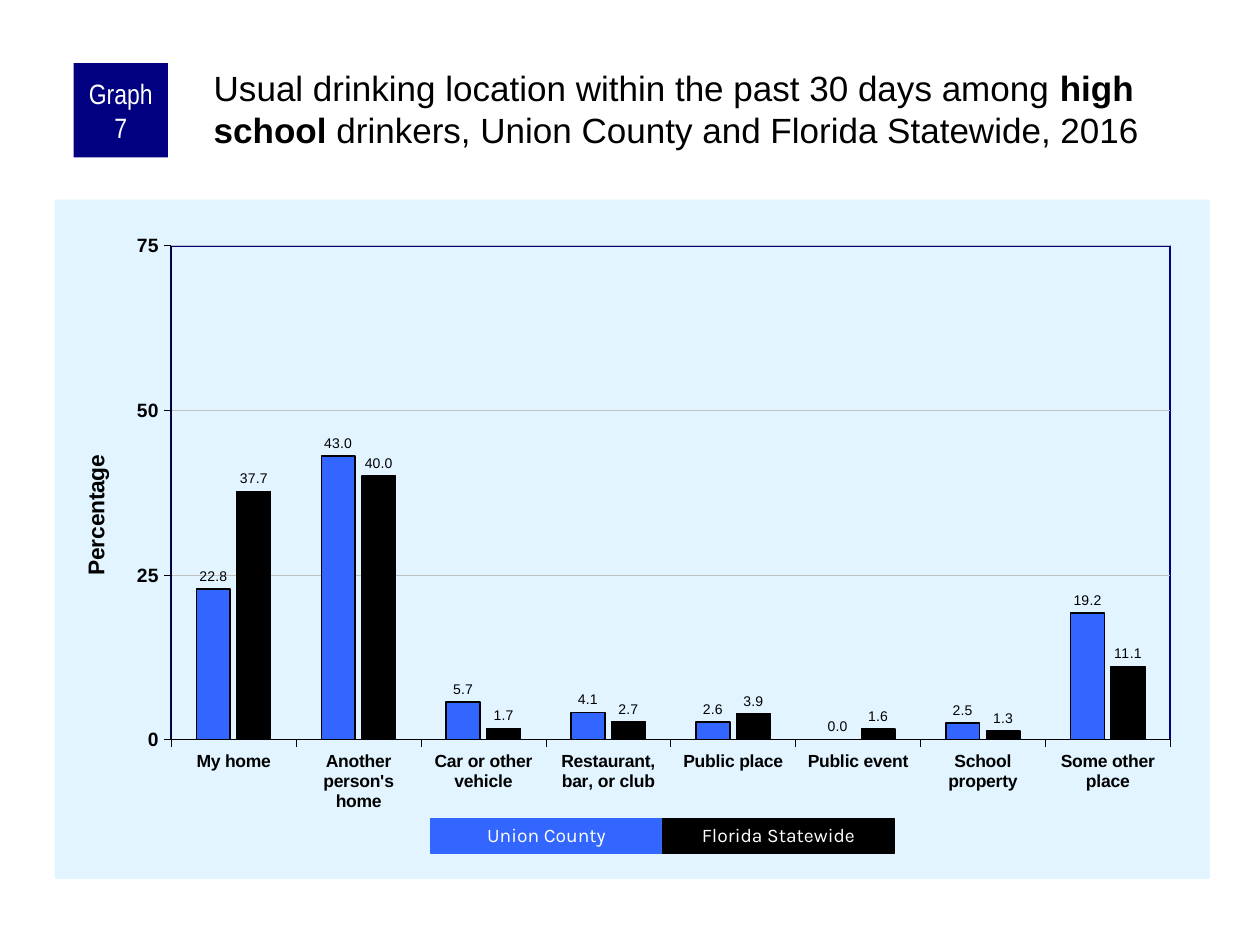
from pptx import Presentation
from pptx.chart.data import CategoryChartData
from pptx.dml.color import RGBColor
from pptx.enum.chart import XL_CHART_TYPE as ChartType
from pptx.enum.chart import XL_LABEL_POSITION as LabelPosition
from pptx.enum.chart import XL_TICK_MARK as TickMark
from pptx.enum.shapes import MSO_SHAPE as Shape
from pptx.enum.text import MSO_ANCHOR as Anchor
from pptx.enum.text import PP_ALIGN as Align
from pptx.oxml import parse_xml
from pptx.oxml.ns import nsdecls, qn
from pptx.util import Inches, Pt

NAVY = RGBColor(0x00, 0x00, 0x80)
BLUE = RGBColor(0x33, 0x66, 0xFF)
PALE = RGBColor(0xE1, 0xF4, 0xFF)
GRAY = RGBColor(0xC0, 0xC0, 0xC0)
BLACK = RGBColor(0x00, 0x00, 0x00)
WHITE = RGBColor(0xFF, 0xFF, 0xFF)

WIDTH, HEIGHT = Inches(10), Inches(7.5)
COLUMNS, ROWS = 120, 90

LOCATIONS = {
    "My home": (22.8, 37.7),
    "Another person's home": (43.0, 40.0),
    "Car or other vehicle": (5.7, 1.7),
    "Restaurant, bar, or club": (4.1, 2.7),
    "Public place": (2.6, 3.9),
    "Public event": (0.0, 1.6),
    "School property": (2.5, 1.3),
    "Some other place": (19.2, 11.1),
}
SERIES = (
    ("Union County", BLUE, 1, "0.0"),
    ("Florida Statewide", BLACK, 0.75, "#,##0.0"),
)


def grid(column, row, columns, rows):
    across, down = WIDTH / COLUMNS, HEIGHT / ROWS
    return [int(n) for n in (column * across, row * down, columns * across, rows * down)]


def apply(target, values):
    for name, value in values.items():
        setattr(target, name, value)


def set_font(font, size, color, name="Arial", bold=False):
    apply(font, {"size": Pt(size), "name": name, "bold": bold})
    font.color.rgb = color


def set_line(line, color, width):
    line.color.rgb = color
    line.width = Pt(width)


def add_para(frame, spans, size, color, name="Arial", **values):
    para = frame.paragraphs[0]
    apply(para, values)
    for text, bold in spans:
        span = para.add_run()
        span.text = text
        set_font(span.font, size, color, name, bold)


def add_block(page, place, fill, line=None):
    box = page.shapes.add_shape(Shape.RECTANGLE, *grid(*place))
    box.shadow.inherit = False
    box.fill.solid()
    box.fill.fore_color.rgb = fill
    if line is None:
        box.line.fill.background()
    else:
        set_line(box.line, line, 0.75)
    box.text_frame.word_wrap = True
    box.text_frame.vertical_anchor = Anchor.MIDDLE
    return box.text_frame


def add_badge(page):
    frame = add_block(page, (7, 6, 9, 9), NAVY)
    apply(frame, {"margin_left": Inches(0.05), "margin_right": Inches(0.05),
                  "margin_top": 0, "margin_bottom": 0})
    add_para(frame, [("Graph 7", False)], 16, WHITE, "Arial Narrow", alignment=Align.CENTER)


def add_heading(page):
    frame = page.shapes.add_textbox(*grid(20, 6, 95, 10)).text_frame
    apply(frame, {"word_wrap": True, "margin_left": Inches(0.03), "margin_top": Inches(0.03),
                  "margin_right": 0, "margin_bottom": 0})
    spans = [
        ("Usual drinking location within the past 30 days among ", False),
        ("high school", True),
        (" drinkers, Union County and Florida Statewide, 2016", False),
    ]
    add_para(frame, spans, 20, BLACK)


def add_key(page):
    width = 22.1
    for index, (label, color, *_) in enumerate(SERIES):
        frame = add_block(page, (41 + index * width, 78, width, 3.25), color, color)
        add_para(frame, [(label, False)], 11, WHITE, "Karla",
                 alignment=Align.CENTER, line_spacing=0.9)


def set_layout(element, position, values):
    for old in element.findall(qn("c:layout")):
        element.remove(old)
    parts = "".join(f'<c:{name} val="{value}"/>' for name, value in values.items())
    element.insert(position, parse_xml(
        f'<c:layout {nsdecls("c")}><c:manualLayout>{parts}</c:manualLayout></c:layout>'))


def area_style(fill, line):
    return parse_xml(f'<c:spPr {nsdecls("c", "a")}>{fill}{line}</c:spPr>')


def style_axis(axis, size):
    set_font(axis.tick_labels.font, size, BLACK, bold=True)
    set_line(axis.format.line, BLACK, 0.25)
    apply(axis, {"major_tick_mark": TickMark.OUTSIDE, "minor_tick_mark": TickMark.NONE})


def style_value_axis(axis):
    style_axis(axis, 11)
    apply(axis, {"minimum_scale": 0, "maximum_scale": 75, "major_unit": 25,
                 "has_major_gridlines": True})
    set_line(axis.major_gridlines.format.line, GRAY, 0.25)
    frame = axis.axis_title.text_frame
    add_para(frame, [("Percentage", True)], 13, BLACK)
    body = frame._txBody.bodyPr
    body.set("rot", "-5400000")
    body.set("vert", "horz")
    set_layout(axis.axis_title._element, 1,
               {"xMode": "edge", "yMode": "edge", "x": 0.02, "y": 0.37})


def style_series(series, color, width, number_format):
    series.format.fill.solid()
    series.format.fill.fore_color.rgb = color
    series.invert_if_negative = False
    set_line(series.format.line, BLACK, width)
    labels = series.data_labels
    apply(labels, {"show_value": True, "position": LabelPosition.OUTSIDE_END,
                   "number_format": number_format, "number_format_is_linked": False})
    set_font(labels.font, 8, BLACK)


def style_areas(chart):
    space = chart.element
    body = space.find(qn("c:chart"))
    area = body.find(qn("c:plotArea"))
    set_layout(area, 0, {"layoutTarget": "inner", "xMode": "edge", "yMode": "edge",
                         "x": 0.101, "y": 0.068, "w": 0.865, "h": 0.727})
    empty = "<a:noFill/>"
    border = f'<a:ln w="{Pt(1)}"><a:solidFill><a:srgbClr val="{NAVY}"/></a:solidFill></a:ln>'
    area.append(area_style(empty, border))
    fill = f'<a:solidFill><a:srgbClr val="{PALE}"/></a:solidFill>'
    body.addnext(area_style(fill, f"<a:ln>{empty}</a:ln>"))


def add_location_chart(page):
    data = CategoryChartData()
    data.categories = list(LOCATIONS)
    for (name, *_), values in zip(SERIES, zip(*LOCATIONS.values())):
        data.add_series(name, values)
    place = grid(5.2, 19, 110, 64.7)
    chart = page.shapes.add_chart(ChartType.COLUMN_CLUSTERED, *place, data).chart
    apply(chart, {"has_title": False, "has_legend": False})
    set_font(chart.font, 11.5, BLACK)
    plot = chart.plots[0]
    apply(plot, {"gap_width": 150, "overlap": -20, "vary_by_categories": False})
    for series, (_, *look) in zip(plot.series, SERIES):
        style_series(series, *look)
    style_axis(chart.category_axis, 10)
    style_value_axis(chart.value_axis)
    style_areas(chart)


def main():
    deck = Presentation()
    apply(deck, {"slide_width": WIDTH, "slide_height": HEIGHT})
    page = deck.slides.add_slide(deck.slide_layouts[6])
    add_location_chart(page)
    add_badge(page)
    add_heading(page)
    add_key(page)
    deck.save("out.pptx")


if __name__ == "__main__":
    main()
